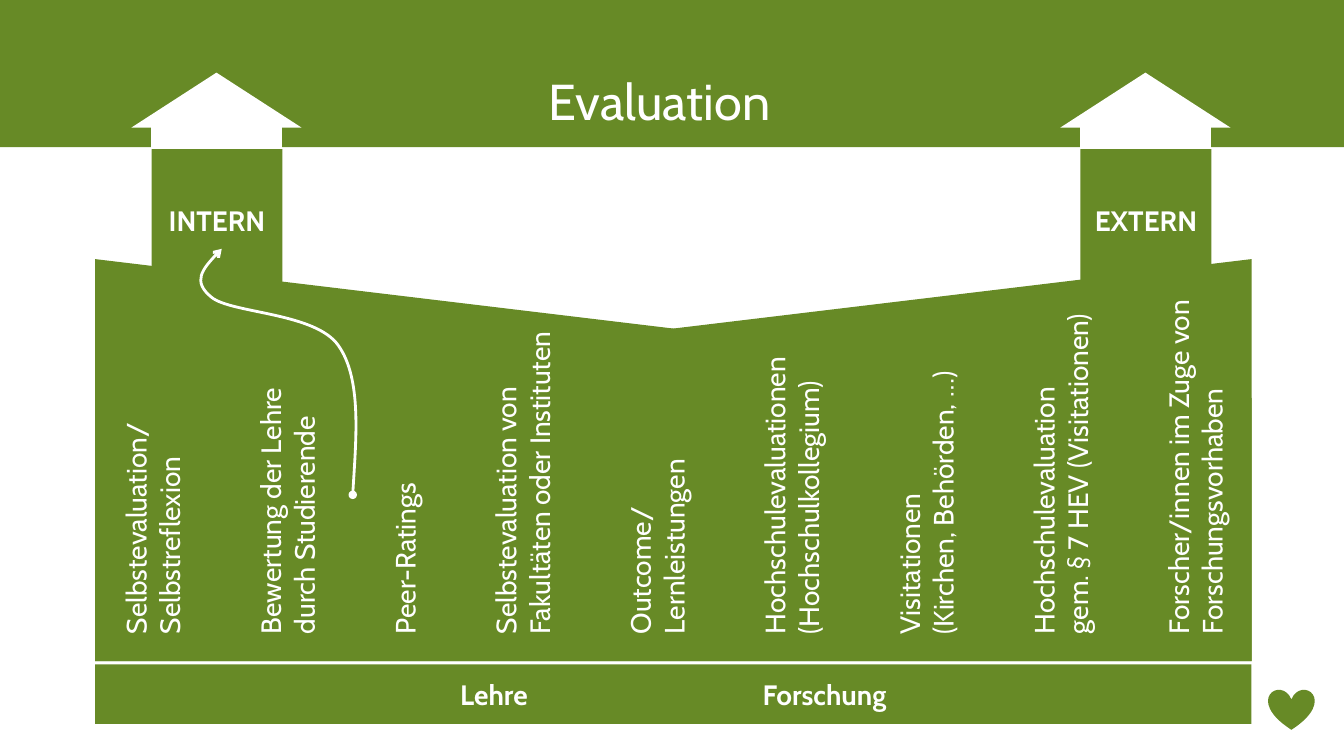
"""Build the slide on internal and external evaluation."""
from lxml import etree
from pptx import Presentation
from pptx.dml.color import RGBColor
from pptx.enum.shapes import MSO_SHAPE
from pptx.enum.text import MSO_ANCHOR, PP_ALIGN
from pptx.oxml.ns import qn
from pptx.util import Cm, Pt

GREEN = RGBColor(0x67, 0x8A, 0x26)
WHITE = RGBColor(0xFF, 0xFF, 0xFF)
RECT, ARROW, HEART = MSO_SHAPE.RECTANGLE, MSO_SHAPE.DOWN_ARROW, MSO_SHAPE.HEART
LEFT, CENTER = PP_ALIGN.LEFT, PP_ALIGN.CENTER
TOP, MIDDLE, BOTTOM = MSO_ANCHOR.TOP, MSO_ANCHOR.MIDDLE, MSO_ANCHOR.BOTTOM

EDGE_L, EDGE_R = 2.4, 31.54
PEAK, DIP, BASE = 6.53, 10.03, 16.66
LINE, GAP = 0.85, 1.69
TOWERS = [("INTERN", 3.31), ("EXTERN", 26.72)]
TOPICS = [
    "Selbstevaluation/\nSelbstreflexion",
    "Bewertung der Lehre\ndurch Studierende",
    "Peer-Ratings",
    "Selbstevaluation von\nFakultäten oder Instituten",
    "Outcome/\nLernleistungen",
    "Hochschulevaluationen\n(Hochschulkollegium)",
    "Visitationen\n(Kirchen, Behörden, …)",
    "Hochschulevaluation\ngem. § 7 HEV (Visitationen)",
    "Forscher/innen im Zuge von\nForschungsvorhaben",
]
FIELDS = [("Lehre", 12.45), ("Forschung", 20.78)]
CURVE = [
    (8.89, 12.47), (8.97, 11.1), (9.12, 9.55), (8.53, 8.71), (7.95, 7.87),
    (5.82, 7.9), (5.33, 7.49), (4.83, 7.09), (5.21, 6.65), (5.59, 6.27),
]


def write(shape, text, size=20, bold=False, align=CENTER, anchor=MIDDLE):
    """Fill a shape with white text, one paragraph per line."""
    frame = shape.text_frame
    frame.word_wrap = True
    frame.vertical_anchor = anchor
    frame.text = text
    for para in frame.paragraphs:
        para.alignment = align
        for run in para.runs:
            font = run.font
            font.name, font.size, font.bold = "Cabin", Pt(size), bold
            font.color.rgb = WHITE


def paint(shape, color):
    """Give a shape a plain fill without line or shadow."""
    shape.shadow.inherit = False
    shape.fill.solid()
    shape.fill.fore_color.rgb = color
    shape.line.fill.background()


def block(slide, kind, x, y, w, h, color=GREEN):
    """Add a plain preset shape."""
    shape = slide.shapes.add_shape(kind, Cm(x), Cm(y), Cm(w), Cm(h))
    paint(shape, color)
    return shape


def label(slide, text, x, y, w, h, **style):
    """Add a text box and return it."""
    box = slide.shapes.add_textbox(Cm(x), Cm(y), Cm(w), Cm(h))
    write(box, text, **style)
    return box


def trace(slide, points, close):
    """Add an outline through the given points."""
    spots = [(Cm(x), Cm(y)) for x, y in points]
    pen = slide.shapes.build_freeform(*spots[0])
    pen.add_line_segments(spots[1:], close=close)
    return pen.convert_to_shape()


def slope(slide, start, end):
    """Add a green panel whose top falls from start to end."""
    points = [(start, PEAK), (end, DIP), (end, BASE), (start, BASE)]
    paint(trace(slide, points, True), GREEN)


def tower(slide, name, x):
    """Add a named tower with a white arrow on top."""
    tip = block(slide, ARROW, x, 1.83, 4.29, 1.96, WHITE)
    tip.rotation = 180
    tip.adjustments[0], tip.adjustments[1] = 0.768, 0.707
    write(block(slide, RECT, x + 0.51, 3.76, 3.3, 3.58), name, bold=True)


def topic(slide, text, x, width):
    """Add an upward running topic."""
    box = label(slide, text, x, 7, width, 8.98, align=LEFT, anchor=TOP)
    frame = box.text_frame
    frame.margin_left = frame.margin_right = 0
    frame.margin_top = frame.margin_bottom = 0
    frame._txBody.bodyPr.set("vert", "vert270")


def topics(slide):
    """Set the topics side by side with equal gaps."""
    x = 2.99
    for text in TOPICS:
        width = LINE * len(text.split("\n"))
        topic(slide, text, x, width)
        x += width + GAP


def curve(slide):
    """Add the curved arrow that leads to the internal tower."""
    shape = trace(slide, CURVE, False)
    shape.shadow.inherit = False
    shape.fill.background()
    shape.line.color.rgb = WHITE
    shape.line.width = Pt(2)
    steps = list(shape._element.iter(qn("a:lnTo")))
    for i in range(0, len(steps), 3):
        bend = etree.Element(qn("a:cubicBezTo"))
        steps[i].addprevious(bend)
        for step in steps[i:i + 3]:
            bend.append(step[0])
            step.getparent().remove(step)
    line = shape.line._get_or_add_ln()
    for end, kind in (("a:headEnd", "oval"), ("a:tailEnd", "arrow")):
        etree.SubElement(line, qn(end), type=kind)


def main():
    """Build and save the slide."""
    deck = Presentation()
    deck.slide_width, deck.slide_height = Cm(33.87), Cm(19.05)
    slide = deck.slides.add_slide(deck.slide_layouts[6])
    block(slide, RECT, 0, 0, 33.87, 3.71)
    slope(slide, EDGE_R, EDGE_L)
    label(slide, "Evaluation", 1.7, 0, 29.84, 3.42, size=36, anchor=BOTTOM)
    for name, x in TOWERS:
        tower(slide, name, x)
    slope(slide, EDGE_L, EDGE_R)
    topics(slide)
    curve(slide)
    block(slide, RECT, EDGE_L, 16.74, EDGE_R - EDGE_L, 1.5)
    for text, mid in FIELDS:
        label(slide, text, mid - 2.5, 16.74, 5, 1.5, bold=True)
    block(slide, HEART, 31.96, 17.37, 1.17, 1.02)
    deck.save("out.pptx")


if __name__ == "__main__":
    main()
